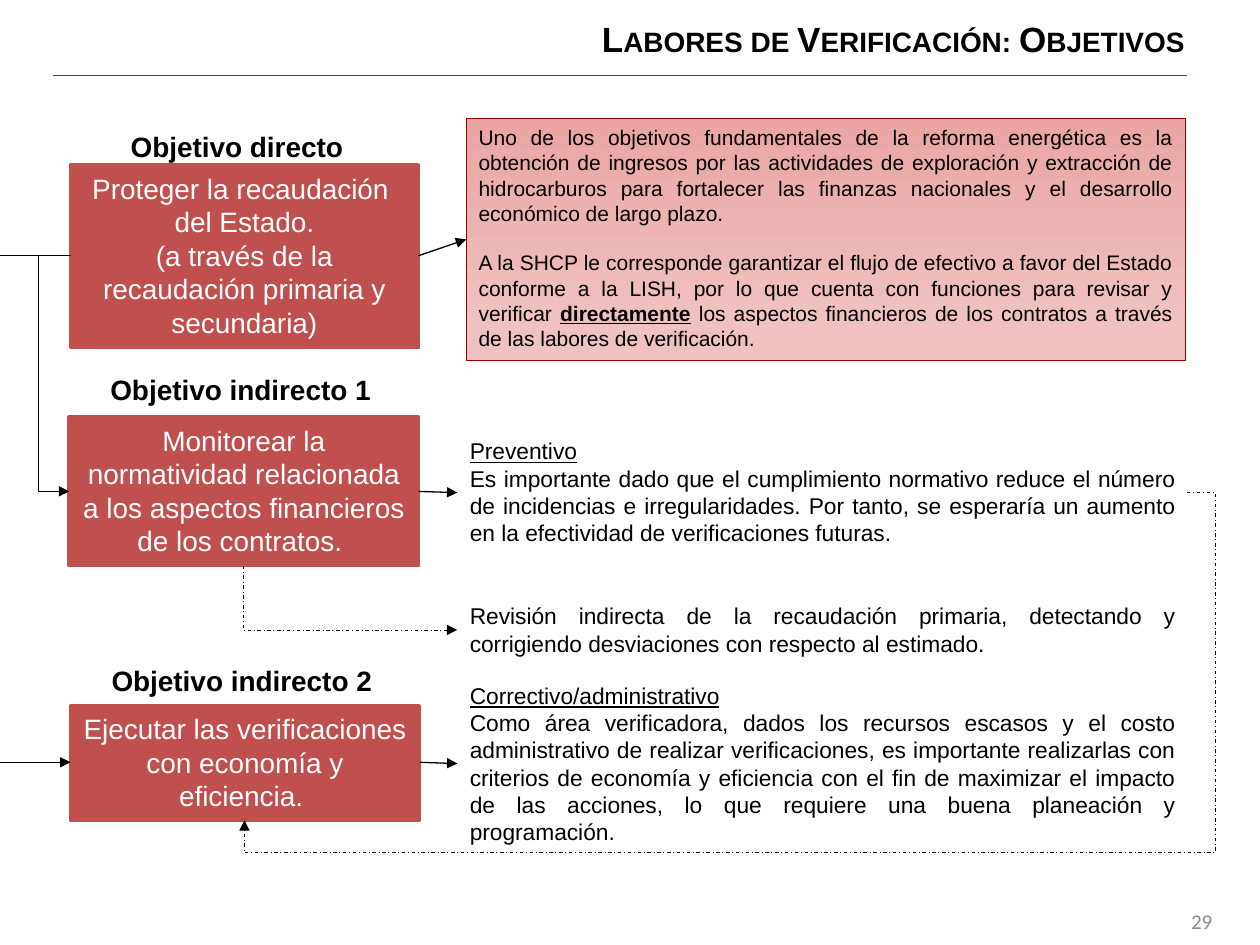
import pptx
import pptx.util
import pptx.dml.color
import pptx.enum.dml
import pptx.enum.shapes
import pptx.enum.text
import pptx.oxml
import pptx.oxml.ns
from dataclasses import dataclass

Inches = pptx.util.Inches
Pt = pptx.util.Pt
Align = pptx.enum.text.PP_ALIGN
Anchor = pptx.enum.text.MSO_ANCHOR
Kind = pptx.enum.shapes.MSO_CONNECTOR
Rect = pptx.enum.shapes.MSO_SHAPE.RECTANGLE
Rgb = pptx.dml.color.RGBColor.from_string


@dataclass
class Theme:
    font: str = "Arial"
    black: str = "000000"
    white: str = "FFFFFF"
    gray: str = "8C8C8C"
    rule: str = "BE0F34"
    goal: str = "C0504D"
    edge: str = "960000"
    pale: str = "F0C1C1"
    rose: str = "EBA5A5"
    title: int = 20
    head: int = 16
    body: int = 13
    note: int = 12


theme = Theme()
deck = pptx.Presentation()
deck.slide_width, deck.slide_height = Inches(10), Inches(7.5)
slide = deck.slides.add_slide(deck.slide_layouts[6])
shapes = slide.shapes


def write(text, box=None, shape=None, size=theme.body, color=theme.black,
          font=theme.font, align=Align.JUSTIFY, anchor=Anchor.TOP,
          bold=False, caps=False, gap=0):
    """Fill a shape or a new text box; _x_ underlines x, *x* also makes it bold."""
    shape = shape or shapes.add_textbox(*map(Inches, box))
    frame = shape.text_frame
    frame.word_wrap = True
    frame.vertical_anchor = anchor
    for i, line in enumerate(text.split("\n")):
        para = frame.paragraphs[0] if i == 0 else frame.add_paragraph()
        para.alignment = align
        if i and gap:
            para.space_before = Pt(gap)
        for j, part in enumerate(line.replace("*", "_*").split("_")):
            strong = part.startswith("*") and j % 2 == 1
            for k, piece in enumerate(part.lstrip("*").split("\v")):
                if k:
                    para.add_line_break()
                if not piece:
                    continue
                run = para.add_run()
                run.text = piece
                run.font.name, run.font.size = font, Pt(size)
                run.font.color.rgb = Rgb(color)
                run.font.bold = bold or strong
                run.font.underline = j % 2 == 1
                if caps:
                    run.font._element.set("cap", "small")


def link(start, end, color=theme.black, width=0.75, tip="tailEnd",
         kind="line", bends=(), dash=False):
    """Draw a connector; bends are the elbow ratios along its width and height."""
    form = Kind.STRAIGHT if kind == "line" else Kind.ELBOW
    line = shapes.add_connector(form, *map(Inches, start + end))
    line.line.color.rgb = Rgb(color)
    line.line.width = Pt(width)
    if dash:
        line.line.dash_style = pptx.enum.dml.MSO_LINE.DASH_DOT
    props = line._element.spPr
    if kind != "line":
        geom = props.find(pptx.oxml.ns.qn("a:prstGeom"))
        geom.set("prst", kind)
        for i, bend in enumerate(bends, 1):
            guide = pptx.oxml.parse_xml(
                f'<a:gd {pptx.oxml.ns.nsdecls("a")} name="adj{i}" '
                f'fmla="val {round(bend * 100000)}"/>')
            geom.get_or_add_avLst().append(guide)
    if tip:
        props.get_or_add_ln().append(pptx.oxml.parse_xml(
            f'<a:{tip} {pptx.oxml.ns.nsdecls("a")} type="triangle"/>'))
    props.append(pptx.oxml.parse_xml(
        f'<a:effectLst {pptx.oxml.ns.nsdecls("a")}/>'))


# Title and page number
write("Labores de Verificación: Objetivos", (0.5, 0.01, 9, 0.59),
      size=theme.title, align=Align.RIGHT, anchor=Anchor.MIDDLE,
      bold=True, caps=True)
link((0.42, 0.6), (9.42, 0.6), color=theme.rule, width=1, tip=None)
write("29", (7.39, 7.11, 2.33, 0.4), size=theme.note, color=theme.gray,
      font="Calibri", align=Align.RIGHT, anchor=Anchor.MIDDLE)

# Goals: heading, its box, then the goal and its box
goals = [
    ("Objetivo directo", (0.72, 0.98, 2.32, 0.37),
     "Proteger la recaudación \vdel Estado.\n"
     "(a través de la recaudación primaria y secundaria)",
     (0.56, 1.31, 2.76, 1.45)),
    ("Objetivo indirecto 1", (0.72, 2.91, 2.38, 0.37),
     "Monitorear la normatividad relacionada a los aspectos financieros "
     "de los contratos. ", (0.55, 3.31, 2.77, 1.18)),
    ("Objetivo indirecto 2", (0.74, 5.22, 2.36, 0.37),
     "Ejecutar las verificaciones con economía y eficiencia. ",
     (0.56, 5.6, 2.77, 0.91)),
]
for head, spot, goal, box in goals:
    tile = shapes.add_shape(Rect, *map(Inches, box))
    tile.shadow.inherit = False
    tile.fill.solid()
    tile.fill.fore_color.rgb = tile.line.color.rgb = Rgb(theme.goal)
    tile.line.width = Pt(2)
    write(goal, shape=tile, size=theme.head, color=theme.white,
          align=Align.CENTER)
    write(head, spot, size=theme.head, align=Align.CENTER, bold=True)

# Shaded panel on the direct goal
panel = shapes.add_shape(Rect, *map(Inches, (3.7, 0.94, 5.71, 1.92)))
panel.shadow.inherit = False
panel.fill.gradient()
panel.fill.gradient_angle = 90
tones = [(0.14, theme.pale), (1, theme.rose)]
for stop, (place, tone) in zip(panel.fill.gradient_stops, tones):
    stop.position, stop.color.rgb = place, Rgb(tone)
panel.line.color.rgb = Rgb(theme.edge)
panel.line.width = Pt(0.75)
write("Uno de los objetivos fundamentales de la reforma energética es la "
      "obtención de ingresos por las actividades de exploración y extracción "
      "de hidrocarburos para fortalecer las finanzas nacionales y el "
      "desarrollo económico de largo plazo.\n"
      "A la SHCP le corresponde garantizar el flujo de efectivo a favor del "
      "Estado conforme a la LISH, por lo que cuenta con funciones para revisar "
      "y verificar *directamente_ los aspectos financieros de los contratos a "
      "través de las labores de verificación.",
      shape=panel, size=theme.note, gap=14)

# Notes on the indirect goals
notes = [
    (3.42, 0.98, "_Preventivo_\nEs importante dado que el cumplimiento "
     "normativo reduce el número de incidencias e irregularidades. Por tanto, "
     "se esperaría un aumento en la efectividad de verificaciones futuras."),
    (4.73, 0.54, "Revisión indirecta de la recaudación primaria, detectando y "
     "corrigiendo desviaciones con respecto al estimado."),
    (5.36, 1.41, "_Correctivo/administrativo_\nComo área verificadora, dados "
     "los recursos escasos y el costo administrativo de realizar "
     "verificaciones, es importante realizarlas con criterios de economía y "
     "eficiencia con el fin de maximizar el impacto de las acciones, lo que "
     "requiere una buena planeación y programación."),
]
for top, high, text in notes:
    write(text, (3.63, top, 5.79, high))

# Arrows from each goal to its note
link((3.32, 2.03), (3.7, 1.9))
link((3.32, 3.9), (3.63, 3.91))
link((3.33, 6.05), (3.63, 6.06))

# Links between goals; the outer one meets the slide edge
link((0.56, 2.03), (0.55, 3.9), kind="bentConnector3", bends=[25.94])
link((0, 2.03), (0.56, 2.03), tip=None)
link((0, 6.05), (0.56, 6.05))

# Dashed links
link((9.42, 3.91), (1.94, 6.51), kind="bentConnector4", bends=[-0.03, 1.1],
     width=0.5, dash=True)
link((3.63, 5), (1.93, 4.49), kind="bentConnector2", tip="headEnd",
     width=0.5, dash=True)

deck.save("out.pptx")
